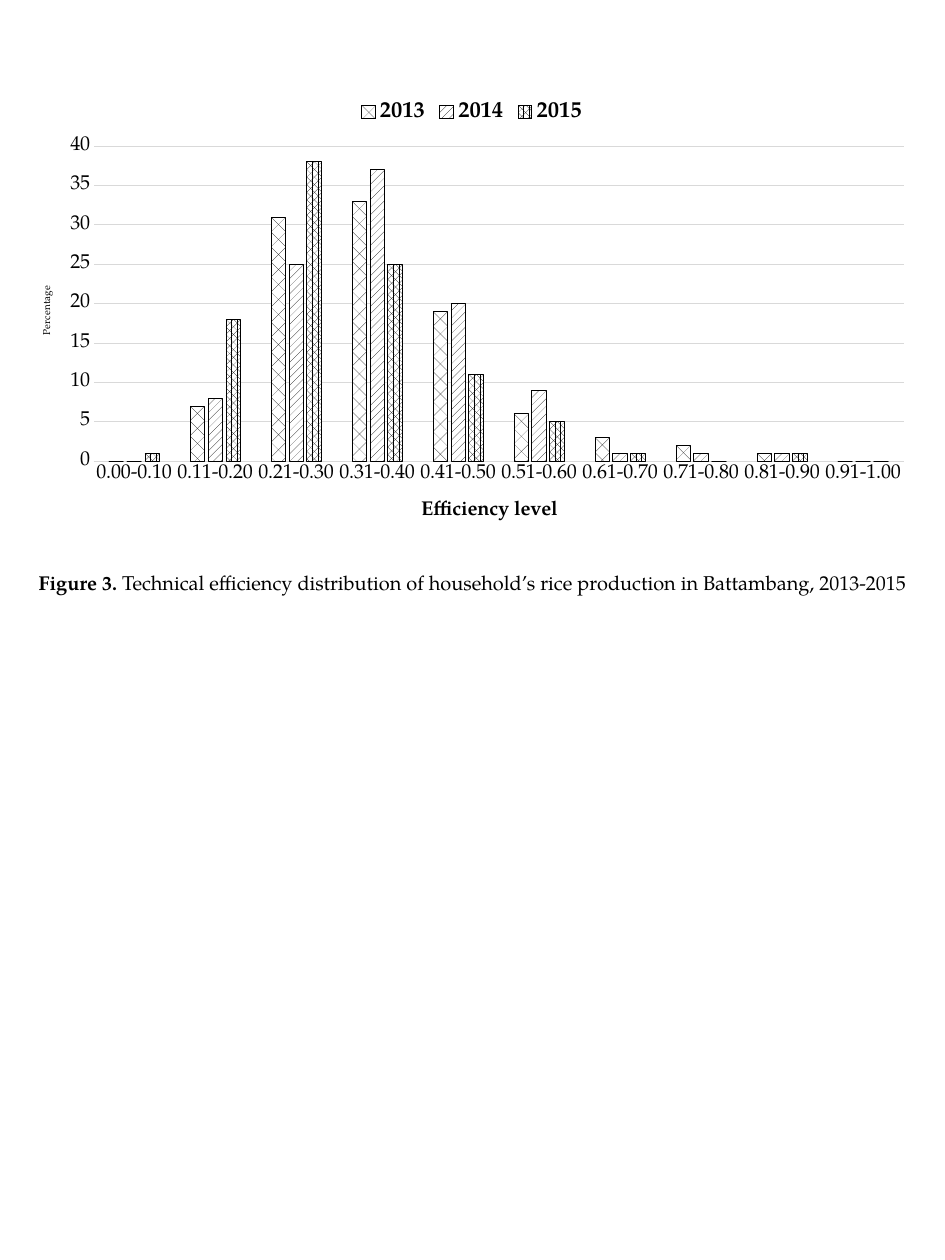
from dataclasses import dataclass

from lxml.etree import SubElement
from pptx import Presentation
from pptx.chart.data import CategoryChartData
from pptx.dml.color import RGBColor
from pptx.enum.chart import XL_CHART_TYPE, XL_LEGEND_POSITION, XL_TICK_MARK
from pptx.enum.dml import MSO_PATTERN
from pptx.enum.text import MSO_ANCHOR, MSO_AUTO_SIZE, PP_ALIGN
from pptx.oxml.ns import qn
from pptx.util import Inches, Pt

INK = {"text": "000000", "paper": "FFFFFF", "grid": "D9D9D9"}
FACE = "TeX Gyre Pagella"
BANDS = ["0.00-0.10"] + [f"0.{n}1-{(n + 1) / 10:.2f}" for n in range(1, 10)]


@dataclass
class Year:
    name: str
    vals: list[int]
    fill: MSO_PATTERN


@dataclass
class Title:
    text: str
    size: int
    bold: bool
    left: float
    top: float


YEARS = [
    Year("2013", [0, 7, 31, 33, 19, 6, 3, 2, 1, 0], MSO_PATTERN.DIAGONAL_BRICK),
    Year("2014", [0, 8, 25, 37, 20, 9, 1, 1, 1, 0], MSO_PATTERN.PERCENT_20),
    Year("2015", [1, 18, 38, 25, 11, 5, 1, 0, 1, 0], MSO_PATTERN.PERCENT_60),
]
LEVEL = Title("Efficiency level", 16, True, 0.44, 0.9)
SHARE = Title("Percentage", 8, False, 0.02, 0.43)


def color(name: str) -> RGBColor:
    return RGBColor.from_string(INK[name])


def style(font, size: int, bold: bool = False, face: str = FACE) -> None:
    font.name = face
    font.size = Pt(size)
    font.bold = bold
    font.color.rgb = color("text")


def stroke(line, name: str) -> None:
    line.color.rgb = color(name)
    line.width = Pt(0.75)


def place(host, index: int, **marks) -> None:
    for old in host.findall(qn("c:layout")):
        host.remove(old)
    layout = SubElement(host, qn("c:layout"))
    host.insert(index, layout)
    manual = SubElement(layout, qn("c:manualLayout"))
    for tag, val in marks.items():
        SubElement(manual, qn(f"c:{tag}")).set("val", str(val))


def label(axis, title: Title) -> None:
    para = axis.axis_title.text_frame.paragraphs[0]
    run = para.add_run()
    run.text = title.text
    style(run.font, title.size, title.bold)
    host = axis.axis_title._element
    place(host, 1, xMode="edge", yMode="edge", x=title.left, y=title.top)
    axis.major_tick_mark = XL_TICK_MARK.NONE
    axis.minor_tick_mark = XL_TICK_MARK.NONE
    style(axis.tick_labels.font, 16)


def paint(series, year: Year) -> None:
    fill = series.format.fill
    fill.patterned()
    fill.pattern = year.fill
    fill.fore_color.rgb = color("text")
    fill.back_color.rgb = color("paper")
    stroke(series.format.line, "text")
    series.invert_if_negative = False


def graph(slide) -> None:
    data = CategoryChartData(number_format="#,##0")
    data.categories = BANDS
    for year in YEARS:
        data.add_series(year.name, year.vals)
    chart = slide.shapes.add_chart(
        XL_CHART_TYPE.COLUMN_CLUSTERED,
        Inches(0.24), Inches(1), Inches(10), Inches(5), data,
    ).chart
    style(chart.font, 10, face="Calibri")
    chart.has_title = False
    chart.has_legend = True
    chart.legend.position = XL_LEGEND_POSITION.TOP
    chart.legend.include_in_layout = False
    style(chart.legend.font, 18, True)

    plot = chart.plots[0]
    plot.gap_width = 219
    plot.overlap = -27
    plot.vary_by_categories = False
    for series, year in zip(plot.series, YEARS):
        paint(series, year)

    level, share = chart.category_axis, chart.value_axis
    label(level, LEVEL)
    stroke(level.format.line, "grid")
    label(share, SHARE)
    share.format.line.fill.background()
    share.minimum_scale = 0
    share.maximum_scale = 40
    share.major_unit = 5
    share.tick_labels.number_format = "#,##0"
    share.tick_labels.number_format_is_linked = False
    stroke(share.major_gridlines.format.line, "grid")
    area = chart._chartSpace.chart.plotArea
    place(area, 0, layoutTarget="inner", xMode="edge", yMode="edge",
          x=0.08, y=0.125, w=0.9, h=0.7)


def caption(slide) -> None:
    box = slide.shapes.add_textbox(
        Inches(0.26), Inches(6.29), Inches(9.98), Inches(0.37))
    frame = box.text_frame
    frame.word_wrap = False
    frame.auto_size = MSO_AUTO_SIZE.SHAPE_TO_FIT_TEXT
    frame.vertical_anchor = MSO_ANCHOR.MIDDLE
    para = frame.paragraphs[0]
    para.alignment = PP_ALIGN.CENTER
    for text, bold in [
        ("Figure 3.", True),
        (" Technical efficiency distribution of household’s rice production"
         " in Battambang, 2013-2015", False),
    ]:
        run = para.add_run()
        run.text = text
        style(run.font, 16, bold)


def main() -> None:
    deck = Presentation()
    deck.slide_width = Inches(10.5)
    deck.slide_height = Inches(14)
    slide = deck.slides.add_slide(deck.slide_layouts[6])
    graph(slide)
    caption(slide)
    deck.save("out.pptx")


if __name__ == "__main__":
    main()
